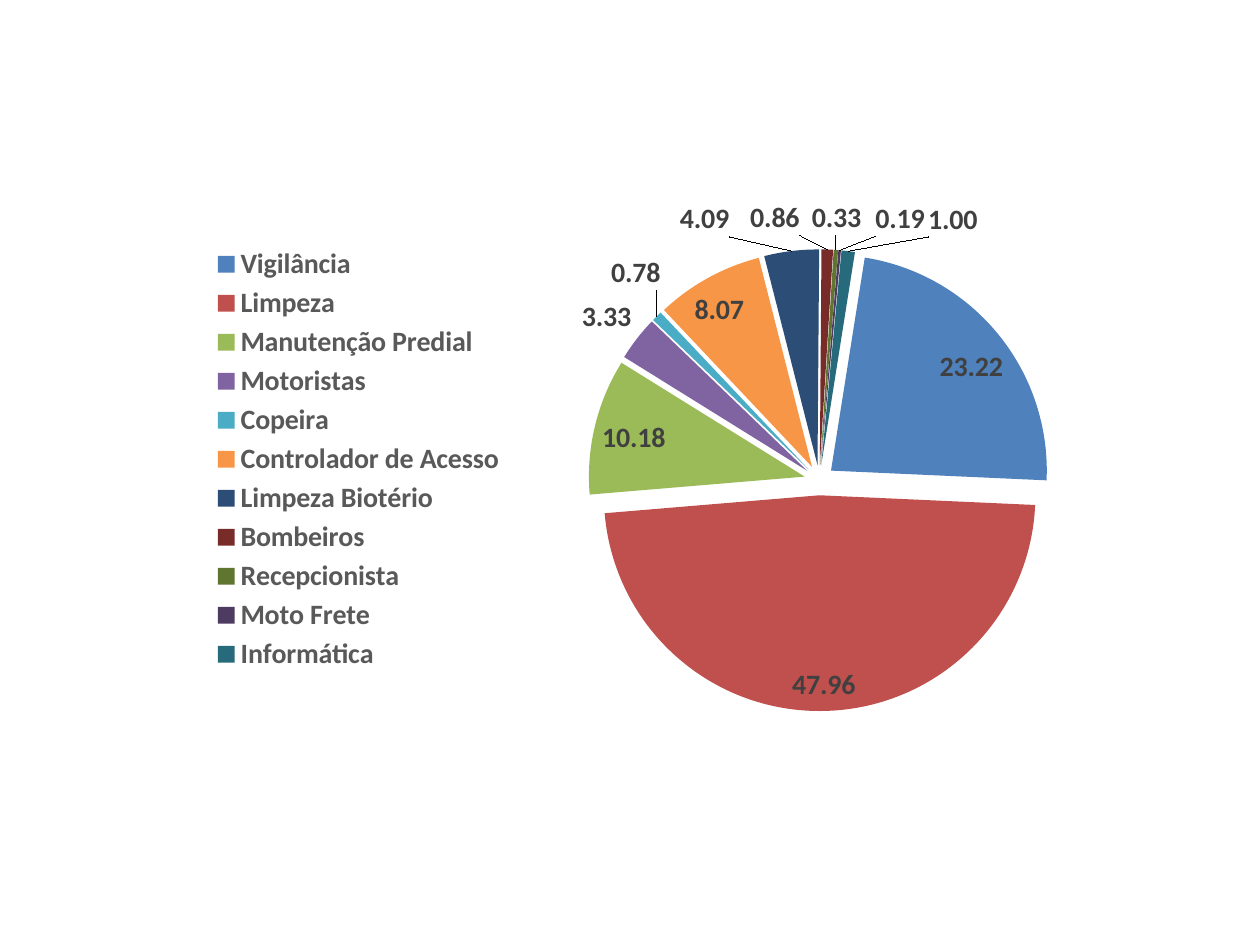
import pptx
import pptx.chart.data
import pptx.dml.color
import pptx.enum.chart
import pptx.oxml
import pptx.oxml.ns
import pptx.util
from pptx.util import Inches

COLORS = {
    "Vigilância": "4F81BD",
    "Limpeza": "C0504D",
    "Manutenção Predial": "9BBB59",
    "Motoristas": "8064A2",
    "Copeira": "4BACC6",
    "Controlador de Acesso": "F79646",
    "Limpeza Biotério": "2C4D75",
    "Bombeiros": "772C2A",
    "Recepcionista": "5F7530",
    "Moto Frete": "4D3B62",
    "Informática": "276A7C",
    "legend": "595959",
    "label": "404040",
}
SHARES = {
    "Vigilância": 23.22,
    "Limpeza": 47.96,
    "Manutenção Predial": 10.18,
    "Motoristas": 3.33,
    "Copeira": 0.78,
    "Controlador de Acesso": 8.07,
    "Limpeza Biotério": 4.09,
    "Bombeiros": 0.86,
    "Recepcionista": 0.33,
    "Moto Frete": 0.19,
    "Informática": 1.00,
}
# Label shifts as fractions of the chart's width and height
LABEL_SHIFTS = {
    "Copeira": (0.01, -0.03),
    "Limpeza Biotério": (-0.07, -0.01),
    "Bombeiros": (-0.06, -0.01),
    "Recepcionista": (0, -0.01),
    "Moto Frete": (0.04, -0.01),
    "Informática": (0.09, -0.01),
}
NUMBER_FORMAT = "#,##0.00"
START_ANGLE = 9
EXPLOSION = 7


def chart_element(tag, content="", **attributes):
    listed = "".join(f' {name}="{value}"' for name, value in attributes.items())
    namespace = pptx.oxml.ns.nsdecls("c")
    return pptx.oxml.parse_xml(f"<c:{tag} {namespace}{listed}>{content}</c:{tag}>")


def manual_layout(target="", modes=(), **fractions):
    parts = [f'<c:layoutTarget val="{target}"/>'] if target else []
    parts += [f'<c:{mode} val="edge"/>' for mode in modes]
    parts += [f'<c:{name} val="{value}"/>' for name, value in fractions.items()]
    return chart_element("layout", f"<c:manualLayout>{''.join(parts)}</c:manualLayout>")


def format_font(font, color):
    font.name = "Calibri"
    font.size = pptx.util.Pt(16)
    font.bold = True
    font.color.rgb = pptx.dml.color.RGBColor.from_string(COLORS[color])


def format_legend(chart):
    chart.has_legend = True
    legend = chart.legend
    legend.position = pptx.enum.chart.XL_LEGEND_POSITION.LEFT
    legend.include_in_layout = False
    format_font(legend.font, "legend")
    layout = manual_layout(modes=("xMode", "yMode"), x=0.01, y=0.18, w=0.36, h=0.63)
    for old_layout in legend._element.xpath("c:layout"):
        legend._element.remove(old_layout)
    legend._element.xpath("c:legendPos")[0].addnext(layout)


def format_plot(chart):
    plot = chart.plots[0]
    plot.vary_by_categories = True
    plot_area = chart._chartSpace.xpath("c:chart/c:plotArea")[0]
    pie = plot_area.xpath("c:pieChart")[0]
    for old_element in plot_area.xpath("c:layout"):
        plot_area.remove(old_element)
    for old_element in pie.xpath("c:firstSliceAng"):
        pie.remove(old_element)
    plot_area.insert(
        0, manual_layout("inner", ("xMode", "yMode"), x=0.45, y=0.19, w=0.53, h=0.67)
    )
    pie.append(chart_element("firstSliceAng", val=START_ANGLE))


def format_slices(series):
    for index, category in enumerate(SHARES):
        fill = series.points[index].format.fill
        fill.solid()
        fill.fore_color.rgb = pptx.dml.color.RGBColor.from_string(COLORS[category])
    first_point = series._element.xpath("c:dPt")[0]
    first_point.addprevious(chart_element("explosion", val=EXPLOSION))


def format_labels(series):
    best_fit = pptx.enum.chart.XL_LABEL_POSITION.BEST_FIT
    labels = series.data_labels
    labels.show_value = True
    labels.number_format = NUMBER_FORMAT
    labels.number_format_is_linked = False
    labels.position = best_fit
    format_font(labels.font, "label")

    categories = list(SHARES)
    for category, (shift_x, shift_y) in LABEL_SHIFTS.items():
        index = categories.index(category)
        label = series.points[index].data_label
        label.position = best_fit
        format_font(label.font, "label")
        position = series._element.xpath(f"c:dLbls/c:dLbl/c:idx[@val='{index}']")[0]
        number_format = chart_element("numFmt", formatCode=NUMBER_FORMAT, sourceLinked=0)
        position.addnext(number_format)
        position.addnext(manual_layout(x=shift_x, y=shift_y))


def add_share_chart(slide, left, top, width, height):
    chart_data = pptx.chart.data.CategoryChartData(number_format=NUMBER_FORMAT)
    chart_data.categories = list(SHARES)
    chart_data.add_series("Series 1", list(SHARES.values()))
    chart = slide.shapes.add_chart(
        pptx.enum.chart.XL_CHART_TYPE.PIE, left, top, width, height, chart_data
    ).chart
    chart.has_title = False
    chart.font.name = "Calibri"
    chart.font.size = pptx.util.Pt(10)
    format_legend(chart)
    format_plot(chart)
    series = chart.plots[0].series[0]
    format_slices(series)
    format_labels(series)


def main():
    presentation = pptx.Presentation()
    presentation.slide_width = Inches(10)
    presentation.slide_height = Inches(7.5)
    slide = presentation.slides.add_slide(presentation.slide_layouts[6])
    add_share_chart(slide, Inches(1.52), Inches(0.94), Inches(6.97), Inches(5.47))
    presentation.save("out.pptx")


if __name__ == "__main__":
    main()
